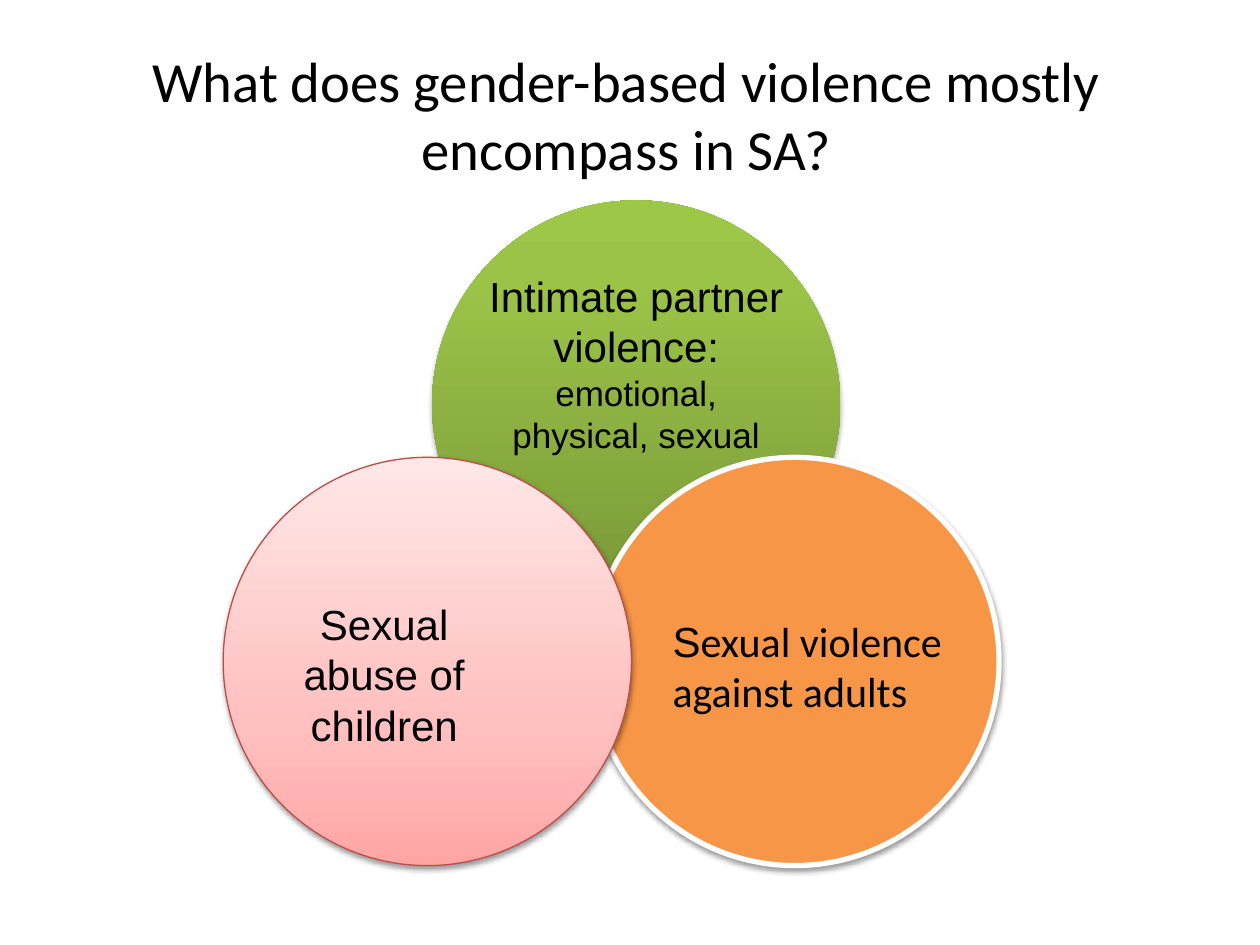
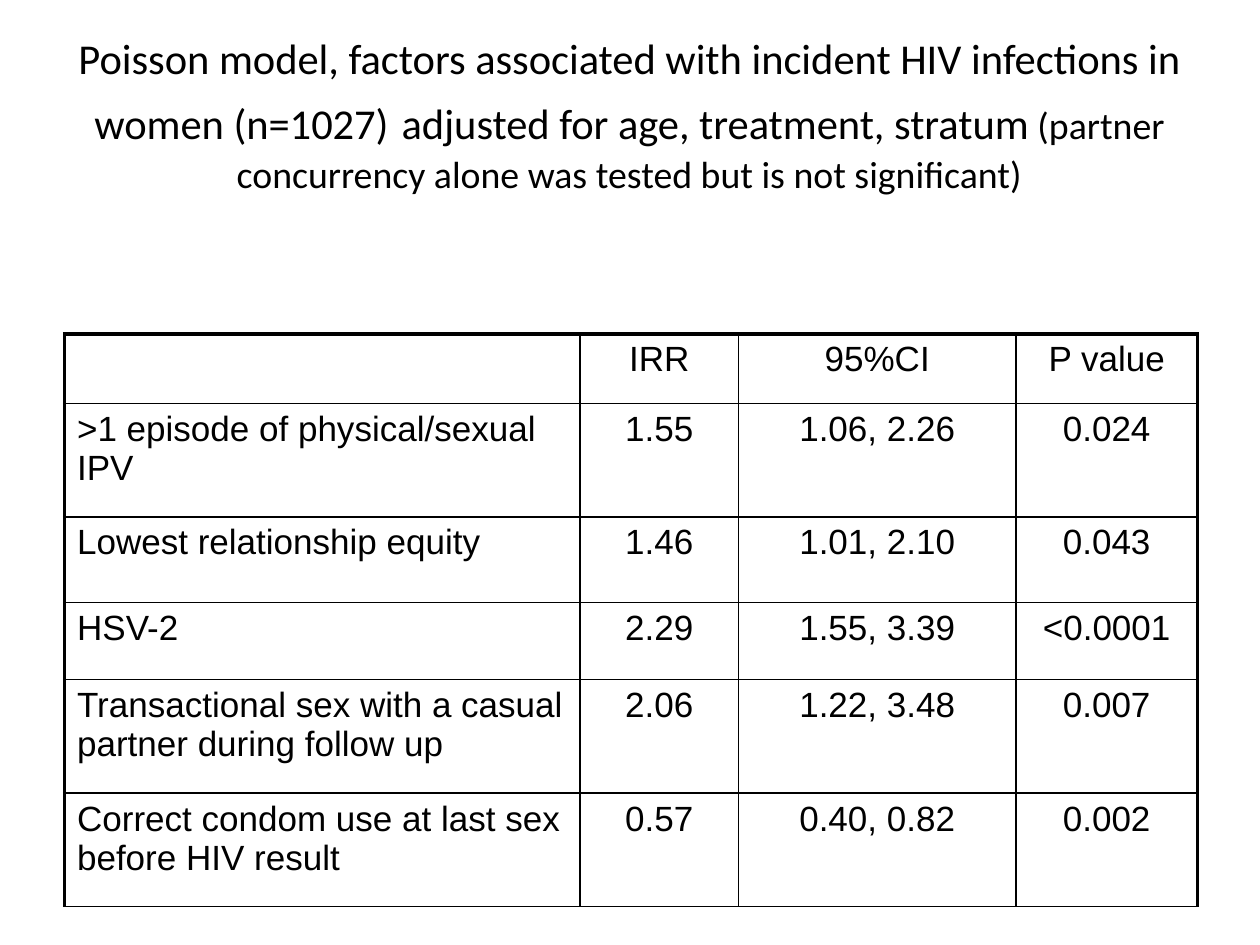
import copy

import pptx
import pptx.dml.color
import pptx.enum.shapes
import pptx.enum.text
import pptx.oxml
import pptx.oxml.ns
import pptx.util
from lxml import etree

Cm = pptx.util.Cm
Pt = pptx.util.Pt
qn = pptx.oxml.ns.qn
ALIGN = pptx.enum.text.PP_ALIGN
MIDDLE = pptx.enum.text.MSO_ANCHOR.MIDDLE

BLACK = "000000"
TITLE_FONT = "Calibri"
BODY_FONT = "Arial"

CIRCLE_SIZE = 8.23
GREEN = [(0, "779737"), (0.8, "9BC348"), (1, "9DC746")]
PINK = [(0, "FFA6A5"), (0.35, "FFC0BF"), (1, "FFE7E7")]

COLUMN_WIDTHS = [10.39, 3.2, 5.59, 3.66]
ROW_HEIGHTS = [1.4, 2.29, 1.73, 1.55, 2.29, 2.29]
RISK_FACTORS = [
    ("", "IRR", "95%CI", "P value"),
    (">1 episode of physical/sexual IPV", "1.55", "1.06, 2.26", "0.024"),
    ("Lowest relationship equity", "1.46", "1.01, 2.10", "0.043"),
    ("HSV-2", "2.29", "1.55, 3.39", "<0.0001"),
    ("Transactional sex with a casual partner during follow up",
     "2.06", "1.22, 3.48", "0.007"),
    ("Correct condom use at last sex before HIV result",
     "0.57", "0.40, 0.82", "0.002"),
]


def color(value):
    return pptx.dml.color.RGBColor.from_string(value)


def set_font(font, name, size):
    font.name = name
    font.size = Pt(size)
    font.color.rgb = color(BLACK)


def add_text(slide, box, paragraphs, align=ALIGN.CENTER, margin=None, wrap=True):
    """Each paragraph is a list of (text, font name, size) runs."""
    text_box = slide.shapes.add_textbox(*map(Cm, box))
    frame = text_box.text_frame
    frame.word_wrap = wrap
    frame.vertical_anchor = MIDDLE
    if margin is not None:
        frame.margin_left = frame.margin_right = Cm(margin)
        frame.margin_top = frame.margin_bottom = Cm(margin)
    for index, runs in enumerate(paragraphs):
        paragraph = frame.add_paragraph() if index else frame.paragraphs[0]
        paragraph.alignment = align
        set_font(paragraph.font, *runs[0][1:])
        for text, name, size in runs:
            run = paragraph.add_run()
            run.text = text
            if len(runs) > 1:
                set_font(run.font, name, size)


def add_title(slide, box, *parts):
    add_text(slide, box, [[(text, TITLE_FONT, size) for text, size in parts]])


def fill_gradient(shape, stops):
    """Fill from the bottom (first stop) to the top (last stop)."""
    shape.fill.gradient()
    shape.fill.gradient_angle = 90
    stop_list = next(shape._element.spPr.iter(qn("a:gsLst")))
    while len(stop_list) < len(stops):
        stop_list.append(copy.deepcopy(stop_list[0]))
    for stop, (position, value) in zip(shape.fill.gradient_stops, stops):
        stop.position = position
        stop.color.rgb = color(value)


def add_drop_shadow(shape, distance, opacity):
    shape.shadow.inherit = False
    effects = shape._element.spPr.find(qn("a:effectLst"))
    shadow = etree.SubElement(
        effects, qn("a:outerShdw"), blurRad=str(Pt(3.1)), dist=str(Pt(distance)),
        dir="5400000", rotWithShape="0")
    shade = etree.SubElement(shadow, qn("a:srgbClr"), val=BLACK)
    etree.SubElement(shade, qn("a:alpha"), val=str(opacity * 1000))


def add_circle(slide, left, top, fill, line=None, shadow=(1.6, 38)):
    oval = pptx.enum.shapes.MSO_SHAPE.OVAL
    circle = slide.shapes.add_shape(
        oval, Cm(left), Cm(top), Cm(CIRCLE_SIZE), Cm(CIRCLE_SIZE))
    if isinstance(fill, str):
        circle.fill.solid()
        circle.fill.fore_color.rgb = color(fill)
    else:
        fill_gradient(circle, fill)
    if line:
        circle.line.color.rgb = color(line[0])
        circle.line.width = Pt(line[1])
    else:
        circle.line.fill.background()
    add_drop_shadow(circle, *shadow)


def add_violence_circles(slide, left, top):
    lower = top + 5.18
    add_circle(slide, left + 4.21, top, GREEN, shadow=(1.8, 35))
    add_text(slide, (left + 5.3, top + 1.42, 6.05, 3.71),
             [[("Intimate partner violence: ", BODY_FONT, 24),
               ("emotional, physical, sexual", BODY_FONT, 20)]], margin=0)
    add_circle(slide, left + 7.41, lower, "F79646", line=("FFFFFF", 3))
    add_circle(slide, left, lower, PINK, line=("BF4C48", 0.75))
    add_text(slide, (left + 0.78, top + 7.29, 4.93, 4.52),
             [[("Sexual abuse of children", BODY_FONT, 24)]], margin=0)
    add_text(slide, (left + 8.81, top + 8.23, 6.2, 2.31),
             [[("S", BODY_FONT, 24), ("exual violence", TITLE_FONT, 24)],
              [("against adults", TITLE_FONT, 24)]],
             align=ALIGN.LEFT, wrap=False)


def set_borders(cell, widths):
    """Widths in points: left, right, top, bottom."""
    properties = cell._tc.get_or_add_tcPr()
    for index, (side, width) in enumerate(zip("LRTB", widths)):
        border = etree.Element(qn("a:ln" + side), w=str(Pt(width)))
        fill = etree.SubElement(border, qn("a:solidFill"))
        etree.SubElement(fill, qn("a:srgbClr"), val=BLACK)
        properties.insert(index, border)


def add_risk_table(slide, left, top):
    rows, columns = len(ROW_HEIGHTS), len(COLUMN_WIDTHS)
    table = slide.shapes.add_table(
        rows, columns, Cm(left), Cm(top),
        Cm(sum(COLUMN_WIDTHS)), Cm(sum(ROW_HEIGHTS))).table
    table.first_row = table.horz_banding = False
    for column, width in zip(table.columns, COLUMN_WIDTHS):
        column.width = Cm(width)
    for row, height in zip(table.rows, ROW_HEIGHTS):
        row.height = Cm(height)
    for row, values in enumerate(RISK_FACTORS):
        for column, value in enumerate(values):
            cell = table.cell(row, column)
            cell.fill.background()
            cell.text = value
            paragraph = cell.text_frame.paragraphs[0]
            paragraph.alignment = ALIGN.CENTER if column else ALIGN.LEFT
            paragraph.space_before = Pt(4)
            set_font(paragraph.font, BODY_FONT, 20)
            outer = (column == 0, column == columns - 1, row == 0, False)
            set_borders(cell, [2.25 if edge else 1 for edge in outer])


def build_circles_slide(slide):
    add_title(slide, (0.89, 0.71, 23.47, 3.18),
              ("What does gender-based violence mostly encompass in SA?", 32.4))
    add_violence_circles(slide, 4.5, 4.04)


def build_table_slide(slide):
    add_title(slide, (0.69, 0.71, 24, 3.18),
              ("Poisson model, factors associated with incident HIV infections "
               "in women (n=1027)", 24.3),
              (" ", 32.4),
              ("adjusted for age, treatment, stratum", 24.3),
              (" (partner concurrency alone was tested but is not significant)", 21.6))
    add_risk_table(slide, 1.3, 6.73)


def main():
    presentation = pptx.Presentation()
    presentation.slide_width = Cm(25.4)
    presentation.slide_height = Cm(19.05)
    for build in (build_circles_slide, build_table_slide):
        build(presentation.slides.add_slide(presentation.slide_layouts[6]))
    presentation.save("out.pptx")


if __name__ == "__main__":
    main()
